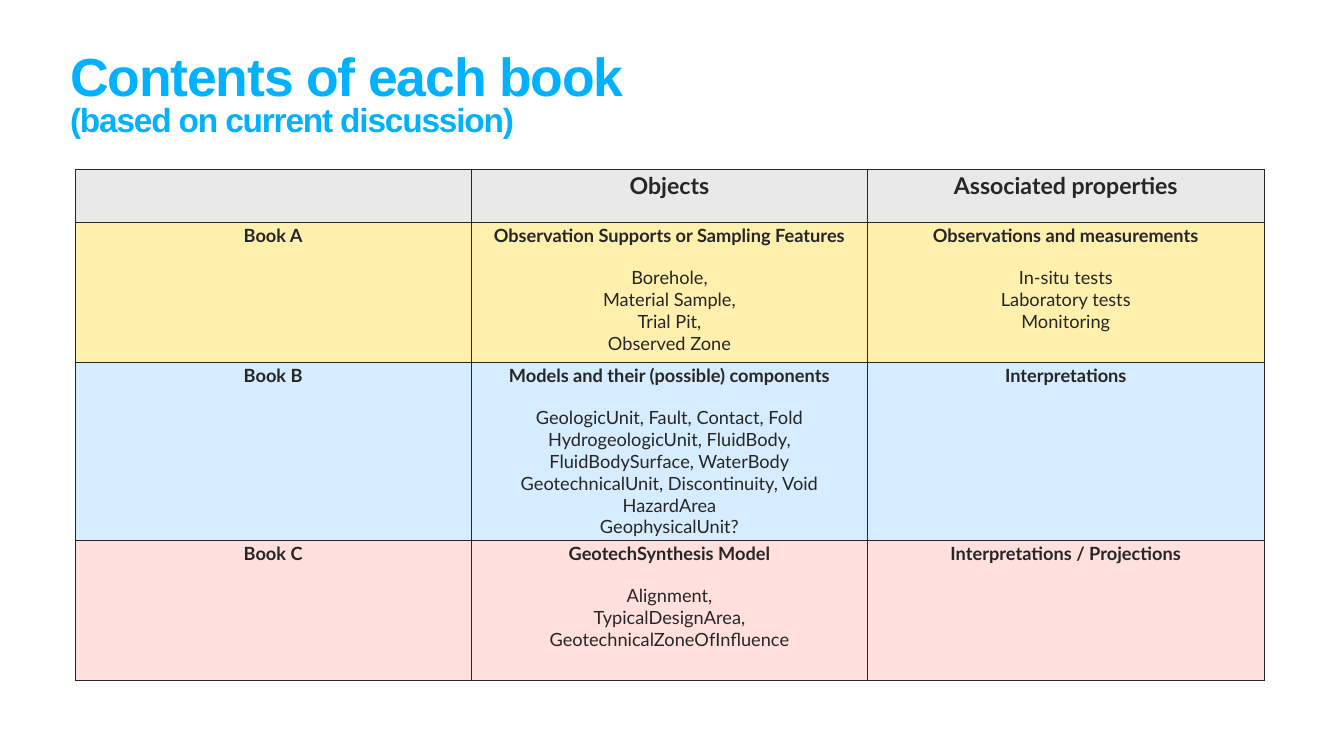
from lxml import etree
from pptx import Presentation
from pptx.dml.color import RGBColor
from pptx.enum.text import MSO_ANCHOR, MSO_AUTO_SIZE, PP_ALIGN
from pptx.oxml.ns import qn
from pptx.util import Emu, Pt

PX = 18143  # EMU per pixel
TOP, NO_FIT = MSO_ANCHOR.TOP, MSO_AUTO_SIZE.NONE
LEFT, CENTER = PP_ALIGN.LEFT, PP_ALIGN.CENTER
CYAN = RGBColor(0x00, 0xB1, 0xFF)
INK = RGBColor(0x26, 0x26, 0x26)
GREY = RGBColor(0xE9, 0xE9, 0xE9)
YELLOW = RGBColor(0xFF, 0xF0, 0xAD)
BLUE = RGBColor(0xD6, 0xEC, 0xFF)
PINK = RGBColor(0xFF, 0xE0, 0xDC)

# Each row: height, fill, text size, cells (a heading line, then items)
ROWS = [
    (53, GREY, 33, [[], ["Objects"], ["Associated properties"]]),
    (140, YELLOW, 26, [
        ["Book A"],
        ["Observation Supports or Sampling Features", "Borehole,",
         "Material Sample,", "Trial Pit,", "Observed Zone"],
        ["Observations and measurements", "In-situ tests",
         "Laboratory tests", "Monitoring"]]),
    (178, BLUE, 26, [
        ["Book B"],
        ["Models and their (possible) components",
         "GeologicUnit, Fault, Contact, Fold",
         "HydrogeologicUnit, FluidBody, FluidBodySurface, WaterBody",
         "GeotechnicalUnit, Discontinuity, Void",
         "HazardArea", "GeophysicalUnit?"],
        ["Interpretations"]]),
    (140, PINK, 26, [
        ["Book C"],
        ["GeotechSynthesis Model", "Alignment,", "TypicalDesignArea,",
         "GeotechnicalZoneOfInfluence"],
        ["Interpretations / Projections"]]),
]


def px(count):
    return Emu(count * PX)


def add_borders(cell):
    properties = cell._tc.get_or_add_tcPr()
    for index, side in enumerate(("a:lnL", "a:lnR", "a:lnT", "a:lnB")):
        line = etree.Element(qn(side), w=str(Pt(1)))
        fill = etree.SubElement(line, qn("a:solidFill"))
        etree.SubElement(fill, qn("a:srgbClr"), val=str(INK))
        properties.insert(index, line)


deck = Presentation()
deck.slide_width, deck.slide_height = px(1344), px(756)
page = deck.slides.add_slide(deck.slide_layouts[5])

# Title with a smaller second line
title = page.shapes.title
title.left, title.top, title.width, title.height = px(67), px(52), px(1211), px(79)
frame = title.text_frame
frame.margin_left = frame.margin_right = px(3)
frame.margin_top = frame.margin_bottom = px(3)
frame.word_wrap = True
frame.auto_size = NO_FIT
frame.vertical_anchor = TOP
frame.text = "Contents of each book\v(based on current discussion)"
para = frame.paragraphs[0]
para.alignment = LEFT
para.line_spacing = 0.8
for span, size in zip(para.runs, (76.5, 47.7)):
    span.font.name = "Arial"
    span.font.size = Pt(size)
    span.font.bold = True
    span.font.color.rgb = CYAN
    span._r.get_or_add_rPr().set("spc", "-170")

# Table of books
height = sum(row[0] for row in ROWS)
table = page.shapes.add_table(len(ROWS), 3, px(75), px(169), px(1189), px(height)).table
for column in table.columns:
    column.width = Emu(1189 * PX // 3)
for row_index, (row_height, color, size, cells) in enumerate(ROWS):
    table.rows[row_index].height = px(row_height)
    for column_index, lines in enumerate(cells):
        cell = table.cell(row_index, column_index)
        cell.fill.solid()
        cell.fill.fore_color.rgb = color
        add_borders(cell)
        cell.vertical_anchor = TOP
        cell.text_frame.text = "\n".join(lines)
        for line_index, para in enumerate(cell.text_frame.paragraphs):
            para.alignment = CENTER
            para.font.name = "Lato"
            if line_index == 1:
                para.space_before = Pt(29)
            for span in para.runs:
                span.font.name = "Lato"
                span.font.size = Pt(size)
                span.font.bold = line_index == 0
                span.font.color.rgb = INK

deck.save("out.pptx")
